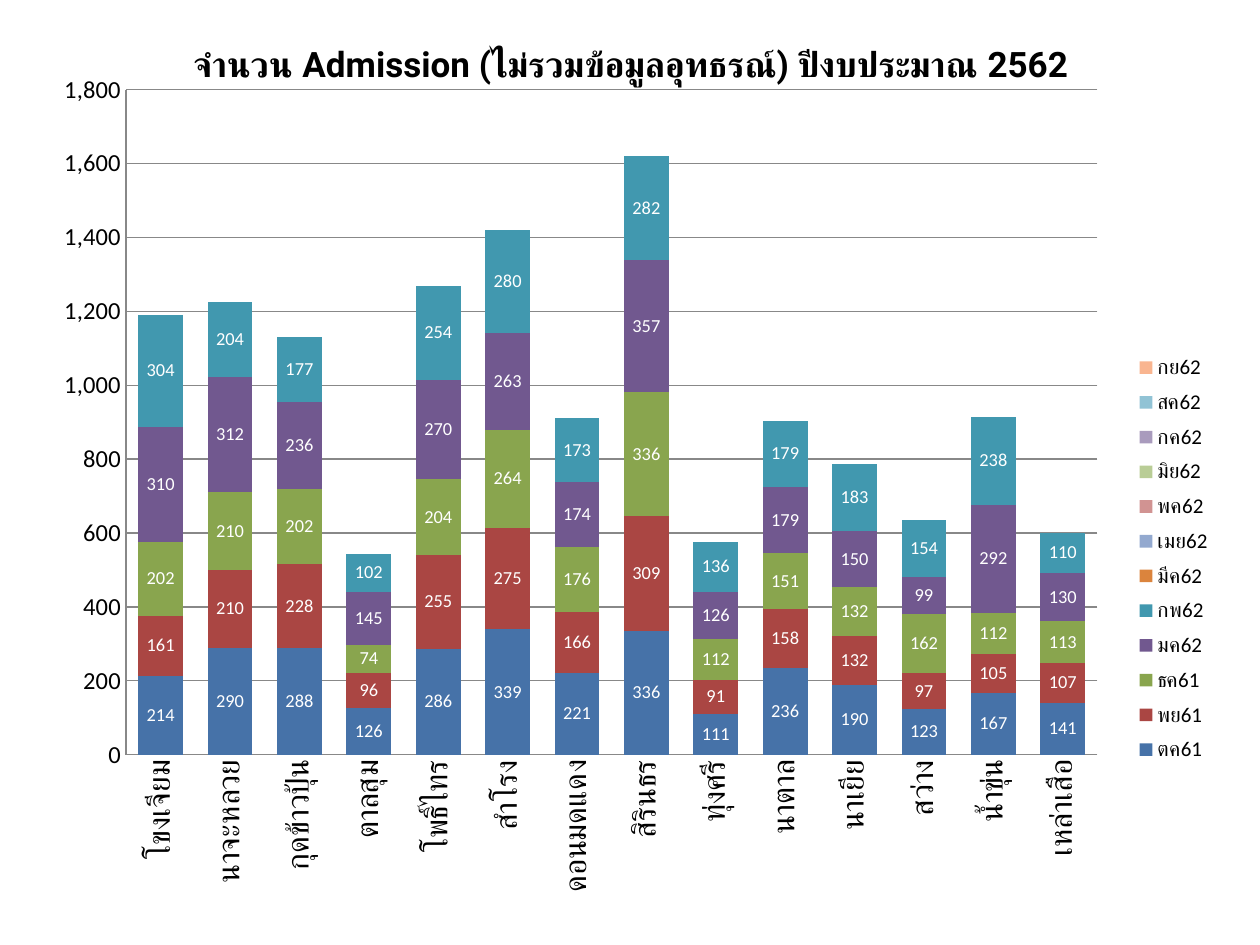
from lxml.etree import SubElement
from pptx import Presentation
from pptx.chart.data import CategoryChartData
from pptx.dml.color import RGBColor
from pptx.enum.chart import XL_CHART_TYPE, XL_LABEL_POSITION, XL_LEGEND_POSITION, XL_TICK_MARK
from pptx.enum.text import MSO_AUTO_SIZE, PP_ALIGN
from pptx.oxml.ns import qn
from pptx.util import Pt

BLACK = RGBColor(0x00, 0x00, 0x00)
WHITE = RGBColor(0xFF, 0xFF, 0xFF)
GRAY = RGBColor(0x88, 0x88, 0x88)
MONTH_COLORS = [RGBColor.from_string(c) for c in (
    "4672A8", "AA4643", "89A54E", "71588F", "4198AF", "DB843D",
    "93A9CF", "D19392", "B9CD96", "A99BBD", "91C3D5", "F9B590")]

DISTRICTS = ["โขงเจียม", "นาจะหลวย", "กุดข้าวปุ้น", "ตาลสุม", "โพธิ์ไทร", "สำโรง", "ดอนมดแดง",
             "สิรินธร", "ทุ่งศรี", "นาตาล", "นาเยีย", "สว่าง", "น้ำขุ่น", "เหล่าเสือ"]
ADMISSIONS = {
    "ตค61": [214, 290, 288, 126, 286, 339, 221, 336, 111, 236, 190, 123, 167, 141],
    "พย61": [161, 210, 228, 96, 255, 275, 166, 309, 91, 158, 132, 97, 105, 107],
    "ธค61": [202, 210, 202, 74, 204, 264, 176, 336, 112, 151, 132, 162, 112, 113],
    "มค62": [310, 312, 236, 145, 270, 263, 174, 357, 126, 179, 150, 99, 292, 130],
    "กพ62": [304, 204, 177, 102, 254, 280, 173, 282, 136, 179, 183, 154, 238, 110],
}
EMPTY_MONTHS = ["มีค62", "เมย62", "พค62", "มิย62", "กค62", "สค62", "กย62"]


class SlideBuilder:
    """Holds the style and the current slide, and adds each kind of element."""

    def __init__(self, s, body_font, title_font):
        self.s = s
        self.body_font = body_font
        self.title_font = title_font

    def format(self, target, **values):
        for name, value in values.items():
            setattr(target, name, value)

    def font(self, font, size, color=BLACK, **values):
        self.format(font, size=Pt(size), **values)
        font.color.rgb = color

    def line(self, line):
        line.color.rgb = GRAY
        line.width = Pt(0.75)

    def layout(self, parent, index, **values):
        for old in parent.findall(qn("c:layout")):
            parent.remove(old)
        layout = SubElement(parent, qn("c:layout"))
        manual = SubElement(layout, qn("c:manualLayout"))
        for name, value in values.items():
            SubElement(manual, qn(f"c:{name}")).set("val", str(value))
        parent.insert(index, layout)

    def title(self, text, left, top, width, height):
        tf = self.s.shapes.add_textbox(Pt(left), Pt(top), Pt(width), Pt(height)).text_frame
        self.format(tf, word_wrap=True, auto_size=MSO_AUTO_SIZE.SHAPE_TO_FIT_TEXT)
        p = tf.paragraphs[0]
        p.alignment = PP_ALIGN.CENTER
        r = p.add_run()
        r.text = text
        self.font(r.font, 20, name=self.title_font, bold=True)

    def stacked_chart(self, categories, series, colors, left, top, width, height):
        data = CategoryChartData(number_format="#,##0")
        data.categories = categories
        for name, values in series.items():
            data.add_series(name, values)
        chart = self.s.shapes.add_chart(XL_CHART_TYPE.COLUMN_STACKED, Pt(left), Pt(top),
                                        Pt(width), Pt(height), data).chart
        chart.has_title = False
        self.font(chart.font, 18, name=self.body_font)
        plot = chart.plots[0]
        self.format(plot, gap_width=55, overlap=100, vary_by_categories=False)
        for item, color in zip(plot.series, colors):
            item.format.fill.solid()
            item.format.fill.fore_color.rgb = color
            labels = item.data_labels
            self.format(labels, show_value=True, number_format="#,##0",
                        number_format_is_linked=False, position=XL_LABEL_POSITION.CENTER)
            self.font(labels.font, 10.5, WHITE)
        self.axes(chart)
        self.legend(chart)
        self.layout(chart.element.find(f".//{qn('c:plotArea')}"), 0, layoutTarget="inner",
                    xMode="edge", yMode="edge", x=0.07, y=0.04, w=0.83, h=0.78)

    def axes(self, chart):
        cat_axis, val_axis = chart.category_axis, chart.value_axis
        for axis, size in ((cat_axis, 18), (val_axis, 14)):
            self.format(axis, major_tick_mark=XL_TICK_MARK.NONE, minor_tick_mark=XL_TICK_MARK.NONE)
            self.line(axis.format.line)
            self.font(axis.tick_labels.font, size)
        body = chart.element.find(f".//{qn('c:catAx')}/{qn('c:txPr')}/{qn('a:bodyPr')}")
        for name, value in {"rot": "-5400000", "vert": "horz"}.items():
            body.set(name, value)
        self.format(val_axis, minimum_scale=0, maximum_scale=1800, major_unit=200,
                    has_major_gridlines=True)
        self.line(val_axis.major_gridlines.format.line)
        self.format(val_axis.tick_labels, number_format="#,##0", number_format_is_linked=False)

    def legend(self, chart):
        chart.has_legend = True
        legend = chart.legend
        self.format(legend, position=XL_LEGEND_POSITION.RIGHT, include_in_layout=False)
        self.font(legend.font, 12)
        self.layout(chart.element.find(f".//{qn('c:legend')}"), 1,
                    xMode="edge", yMode="edge", x=0.93, y=0.34, w=0.07, h=0.5)


def main():
    prs = Presentation()
    prs.slide_width, prs.slide_height = Pt(720), Pt(540)
    s = SlideBuilder(prs.slides.add_slide(prs.slide_layouts[6]), "Calibri", "Roboto")
    no_data = [None] * len(DISTRICTS)
    months = {**ADMISSIONS, **{month: no_data for month in EMPTY_MONTHS}}
    s.stacked_chart(DISTRICTS, months, MONTH_COLORS, 25.2, 31.7, 668.9, 487.4)
    s.title("จำนวน Admission (ไม่รวมข้อมูลอุทธรณ์) ปีงบประมาณ 2562", 59.8, 20.9, 601.2, 31.7)
    prs.save("out.pptx")


if __name__ == "__main__":
    main()
